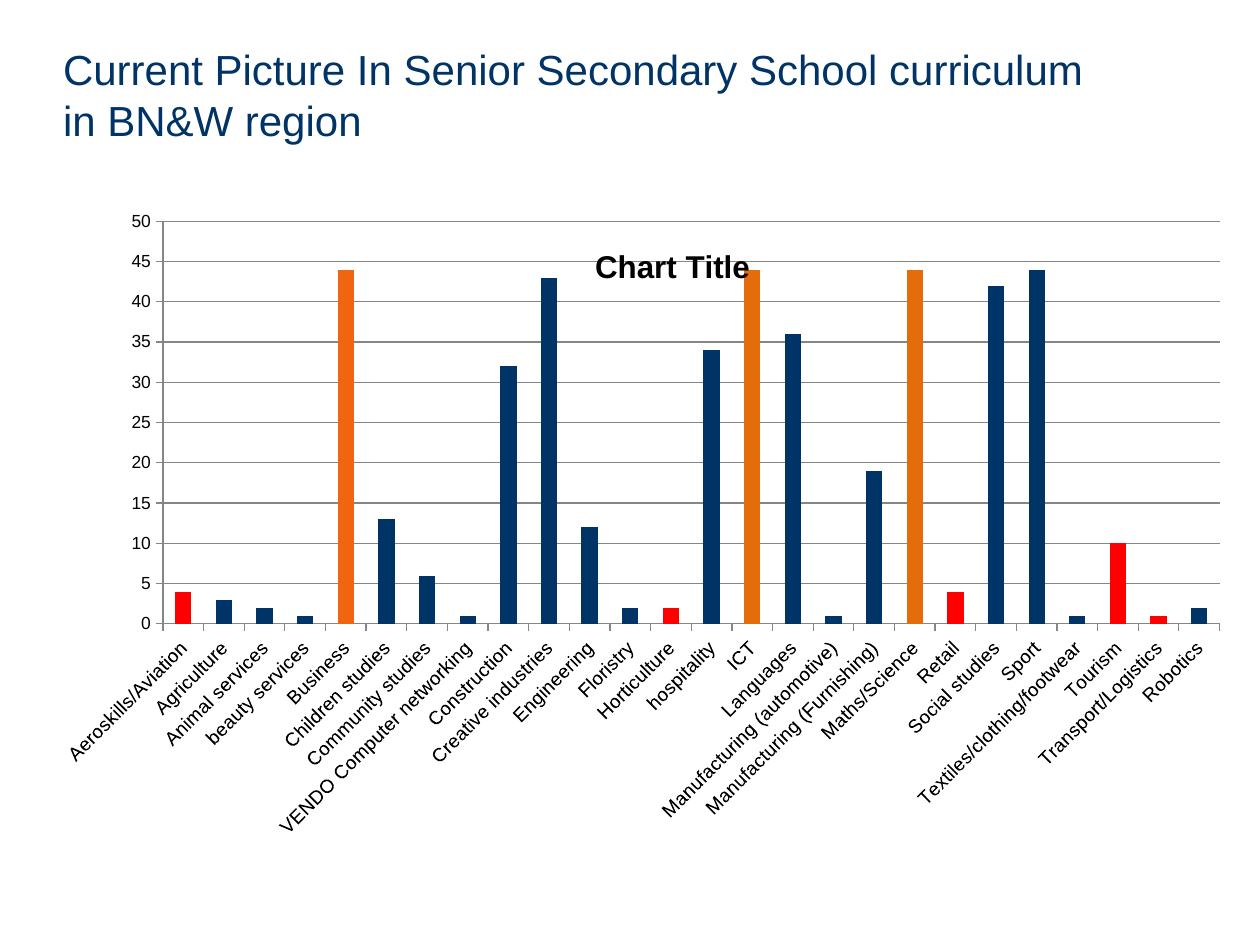
from typing import NamedTuple

from lxml.etree import SubElement
from pptx import Presentation
from pptx.chart.chart import Chart
from pptx.chart.data import CategoryChartData
from pptx.dml.color import RGBColor
from pptx.enum.chart import XL_CHART_TYPE, XL_TICK_MARK
from pptx.enum.text import MSO_ANCHOR, MSO_AUTO_SIZE, PP_ALIGN
from pptx.oxml.ns import qn
from pptx.util import Cm, Pt

FONT = "Arial"
HUES = {"navy": "003366", "red": "FF0000", "flame": "F06510",
        "orange": "E46C0A", "black": "000000", "grey": "868686"}


class Bar(NamedTuple):
    name: str
    count: int
    hue: str = "navy"


BARS = [
    Bar("Aeroskills/Aviation", 4, "red"),
    Bar("Agriculture", 3),
    Bar("Animal services", 2),
    Bar("beauty services", 1),
    Bar("Business", 44, "flame"),
    Bar("Children studies", 13),
    Bar("Community studies", 6),
    Bar("VENDO Computer networking", 1),
    Bar("Construction", 32),
    Bar("Creative industries", 43),
    Bar("Engineering", 12),
    Bar("Floristry", 2),
    Bar("Horticulture", 2, "red"),
    Bar("hospitality", 34),
    Bar("ICT", 44, "orange"),
    Bar("Languages", 36),
    Bar("Manufacturing (automotive)", 1),
    Bar("Manufacturing (Furnishing)", 19),
    Bar("Maths/Science", 44, "orange"),
    Bar("Retail", 4, "red"),
    Bar("Social studies", 42),
    Bar("Sport", 44),
    Bar("Textiles/clothing/footwear", 1),
    Bar("Tourism", 10, "red"),
    Bar("Transport/Logistics", 1, "red"),
    Bar("Robotics", 2),
]


def color(hue: str) -> RGBColor:
    return RGBColor.from_string(HUES[hue])


def style(font, size: float, hue: str, bold: bool = False) -> None:
    font.name, font.size, font.bold = FONT, Pt(size), bold
    font.color.rgb = color(hue)


def place(layout, inner: bool = False, **parts: float) -> None:
    """Fix a chart part at x, y, w, h, given in percent of the chart."""
    for child in list(layout):
        layout.remove(child)
    manual = SubElement(layout, qn("c:manualLayout"))
    if inner:
        SubElement(manual, qn("c:layoutTarget")).set("val", "inner")
    for key in ("x", "y"):
        SubElement(manual, qn(f"c:{key}Mode")).set("val", "edge")
    for key, value in parts.items():
        SubElement(manual, qn(f"c:{key}")).set("val", str(value / 100))


def add_head(slide) -> None:
    head = slide.shapes.title
    head.left, head.top, head.width, head.height = Cm(1.27), Cm(0.88), Cm(20.96), Cm(1.8)
    frame = head.text_frame
    frame.margin_left = frame.margin_right = frame.margin_top = frame.margin_bottom = 0
    frame.word_wrap, frame.auto_size = True, MSO_AUTO_SIZE.NONE
    frame.vertical_anchor = MSO_ANCHOR.TOP
    frame.text = "Current Picture In Senior Secondary School curriculum in BN&W region"
    line = frame.paragraphs[0]
    line.alignment, line.line_spacing, line.space_before = PP_ALIGN.LEFT, 1.0, Pt(0)
    style(line.font, 24, "navy")


def add_bars(slide) -> Chart:
    data = CategoryChartData()
    data.categories = [bar.name for bar in BARS]
    data.add_series("Series 1", [bar.count for bar in BARS])
    chart = slide.shapes.add_chart(XL_CHART_TYPE.COLUMN_CLUSTERED, Cm(1.27), Cm(4.24),
                                   Cm(23.34), Cm(14.81), data).chart
    style(chart.font, 10, "black")
    chart.has_legend = False
    plot = chart.plots[0]
    plot.gap_width, plot.vary_by_categories = 150, False
    row = plot.series[0]
    row.invert_if_negative = False
    row.format.fill.solid()
    row.format.fill.fore_color.rgb = color("navy")
    for index, bar in enumerate(BARS):
        if bar.hue != "navy":
            fill = row.points[index].format.fill
            fill.solid()
            fill.fore_color.rgb = color(bar.hue)
    return chart


def set_axes(chart: Chart) -> None:
    names, counts = chart.category_axis, chart.value_axis
    for axis, size in ((names, 11), (counts, 10)):
        style(axis.tick_labels.font, size, "black")
        axis.major_tick_mark = XL_TICK_MARK.OUTSIDE
        axis.minor_tick_mark = XL_TICK_MARK.NONE
        axis.format.line.color.rgb = color("grey")
    turn = names.tick_labels.font._element.getparent().getparent().getparent()
    turn.find(qn("a:bodyPr")).set("rot", str(-45 * 60000))
    counts.minimum_scale, counts.maximum_scale, counts.major_unit = 0, 50, 5
    counts.has_major_gridlines = True
    counts.major_gridlines.format.line.color.rgb = color("grey")


def set_layout(chart: Chart) -> None:
    chart.has_title = True
    frame = chart.chart_title.text_frame
    frame.text = "Chart Title"
    style(frame.paragraphs[0].font, 18, "black", bold=True)
    title = chart.chart_title._element
    title.get_or_add_layout() if hasattr(title, "get_or_add_layout") else None
    spot = title.find(qn("c:layout"))
    if spot is None:
        spot = SubElement(title, qn("c:layout"))
        title.find(qn("c:tx")).addnext(spot)
    place(spot, x=45.2, y=4)
    over = title.find(qn("c:overlay"))
    if over is None:
        over = SubElement(title, qn("c:overlay"))
        spot.addnext(over)
    over.set("val", "1")
    area = chart._chartSpace.chart.plotArea
    inner = area.find(qn("c:layout"))
    if inner is None:
        inner = SubElement(area, qn("c:layout"))
        area.insert(0, inner)
    place(inner, inner=True, x=8.2, y=1.5, w=91.7, h=54.8)


def main() -> None:
    deck = Presentation()
    deck.slide_width, deck.slide_height = Cm(25.4), Cm(19.05)
    slide = deck.slides.add_slide(deck.slide_layouts[5])
    add_head(slide)
    chart = add_bars(slide)
    set_axes(chart)
    set_layout(chart)
    deck.save("out.pptx")


if __name__ == "__main__":
    main()
